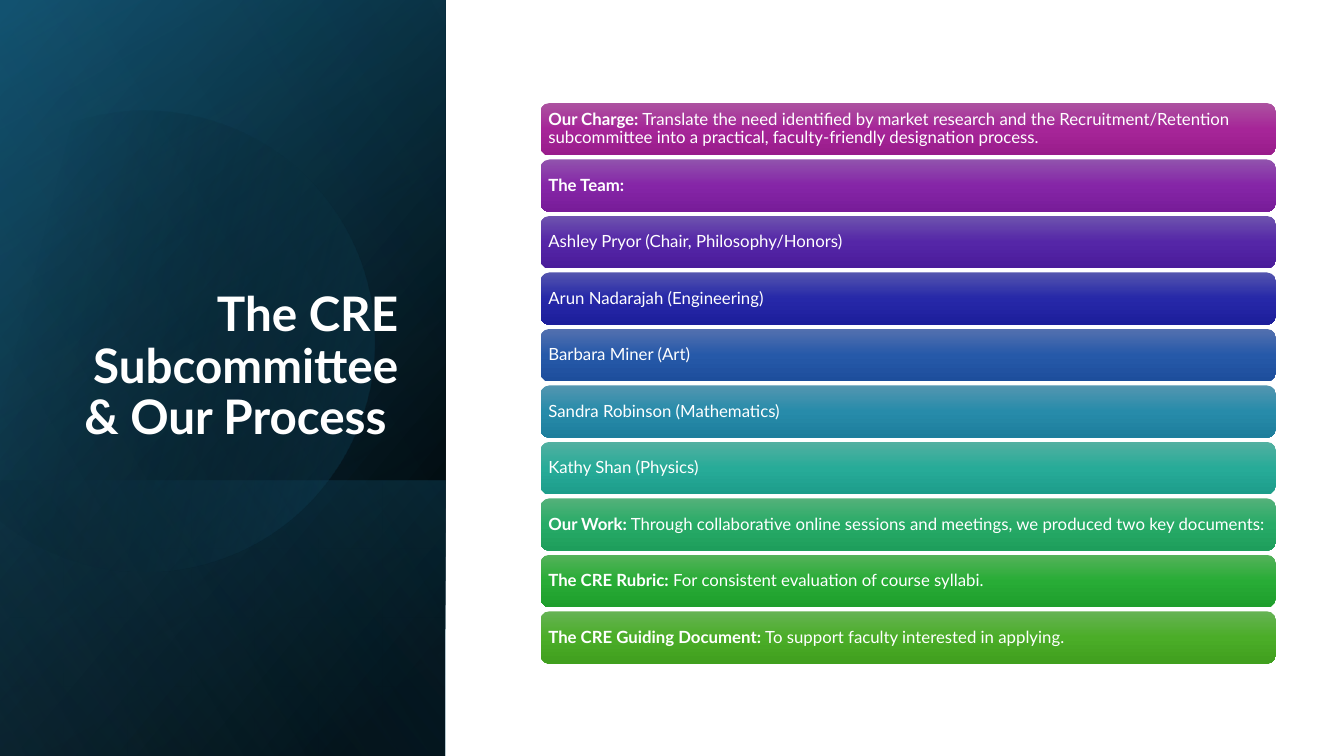
"""Build the slide on the CRE subcommittee: a title panel beside ten coloured bars."""
from dataclasses import dataclass
from itertools import pairwise
from math import cos, radians, sin, tan

from lxml.etree import SubElement
from pptx import Presentation
from pptx.dml.color import RGBColor
from pptx.enum.shapes import MSO_SHAPE as Geom
from pptx.enum.text import MSO_ANCHOR as Anchor, PP_ALIGN as Align
from pptx.oxml.ns import qn
from pptx.shapes.autoshape import Shape
from pptx.slide import Slide
from pptx.text.text import TextFrame
from pptx.util import Emu, Inches, Pt

SLIDE_W, SLIDE_H = Inches(13.3333), Inches(7.5)
FONT = "Lato"
WHITE = RGBColor(0xFF, 0xFF, 0xFF)
BLACK = RGBColor(0x00, 0x00, 0x00)
NAVY = RGBColor(0x10, 0x48, 0x62)
TEAL = RGBColor(0x15, 0x60, 0x82)
SKY = RGBColor(0x46, 0xB1, 0xE1)


@dataclass(frozen=True)
class Box:
    left: float
    top: float
    width: float
    height: float

    def emu(self) -> tuple[Emu, Emu, Emu, Emu]:
        return across(self.left), down(self.top), across(self.width), down(self.height)

    def lowered(self, percent: float) -> "Box":
        return Box(self.left, self.top + percent, self.width, self.height)


@dataclass(frozen=True)
class Stop:
    position: int
    color: RGBColor
    alpha: int = 100


@dataclass(frozen=True)
class Gradient:
    angle: int
    stops: tuple[Stop, ...]


@dataclass(frozen=True)
class Panel:
    box: Box
    gradient: Gradient


@dataclass(frozen=True)
class Bar:
    heading: str
    body: str
    top: RGBColor
    middle: RGBColor
    bottom: RGBColor


SIDE = Box(0, 0, 33.15, 100)
SIDE_FOOT = Box(0, 63.53, 33.15, 36.47)
TITLE = Box(4.78, 24.6, 25.58, 34.93)
FIRST_BAR = Box(40.23, 13.63, 54.68, 6.93)
FIRST_LABEL = Box(40.43, 13.97, 54.3, 6.27)
BAR_PITCH = 7.47

BACK_PANELS = (
    Panel(SIDE, Gradient(50, (Stop(8, BLACK), Stop(100, NAVY)))),
    Panel(SIDE, Gradient(30, (Stop(0, BLACK, 0), Stop(99, TEAL, 46)))),
    Panel(SIDE_FOOT, Gradient(130, (Stop(2, TEAL, 29), Stop(100, BLACK, 30)))),
)
FRONT_PANEL = Panel(SIDE, Gradient(120, (Stop(0, BLACK, 0), Stop(99, SKY, 11))))
DISC_GRADIENT = Gradient(30, (Stop(29, BLACK, 0), Stop(100, TEAL, 43)))
DISC_ANGLES = (-117.9, -90, 0, 90, 150.1)

BARS = (
    Bar("Our Charge:", " Translate the need identified by market research and the "
        "Recruitment/Retention subcommittee into a practical, faculty-friendly designation process.",
        RGBColor(0xAC, 0x53, 0xA0), RGBColor(0xA6, 0x25, 0x98), RGBColor(0x99, 0x1C, 0x8B)),
    Bar("The Team:", "",
        RGBColor(0x91, 0x53, 0xAD), RGBColor(0x85, 0x25, 0xA7), RGBColor(0x78, 0x1C, 0x99)),
    Bar("", "Ashley Pryor (Chair, Philosophy/Honors)",
        RGBColor(0x6D, 0x53, 0xAE), RGBColor(0x55, 0x26, 0xA7), RGBColor(0x4A, 0x1C, 0x9A)),
    Bar("", "Arun Nadarajah (Engineering)",
        RGBColor(0x53, 0x54, 0xAE), RGBColor(0x26, 0x28, 0xA8), RGBColor(0x1D, 0x1E, 0x9B)),
    Bar("", "Barbara Miner (Art)",
        RGBColor(0x53, 0x70, 0xAF), RGBColor(0x26, 0x59, 0xA9), RGBColor(0x1D, 0x4E, 0x9C)),
    Bar("", "Sandra Robinson (Mathematics)",
        RGBColor(0x53, 0x96, 0xB0), RGBColor(0x27, 0x8B, 0xAA), RGBColor(0x1D, 0x7E, 0x9C)),
    Bar("", "Kathy Shan (Physics)",
        RGBColor(0x53, 0xB0, 0xA1), RGBColor(0x27, 0xAB, 0x98), RGBColor(0x1D, 0x9D, 0x8B)),
    Bar("Our Work:", " Through collaborative online sessions and meetings, "
        "we produced two key documents:",
        RGBColor(0x54, 0xB1, 0x7A), RGBColor(0x27, 0xAB, 0x67), RGBColor(0x1E, 0x9E, 0x5C)),
    Bar("The CRE Rubric:", " For consistent evaluation of course syllabi.",
        RGBColor(0x54, 0xB2, 0x5A), RGBColor(0x28, 0xAC, 0x36), RGBColor(0x1E, 0x9E, 0x2C)),
    Bar("The CRE Guiding Document:", " To support faculty interested in applying.",
        RGBColor(0x66, 0xB3, 0x54), RGBColor(0x4B, 0xAD, 0x28), RGBColor(0x40, 0x9F, 0x1E)),
)


def across(percent: float) -> Emu:
    return Emu(round(SLIDE_W * percent / 100))


def down(percent: float) -> Emu:
    return Emu(round(SLIDE_H * percent / 100))


def paint(sp: Shape, gradient: Gradient) -> None:
    sp.shadow.inherit = False
    sp.line.fill.background()
    sp.fill.gradient()
    fill = sp.element.spPr.find(qn("a:gradFill"))
    fill.find(qn("a:lin")).set("ang", str(gradient.angle * 60000))
    stops = fill.find(qn("a:gsLst"))
    for old in list(stops):
        stops.remove(old)
    for stop in gradient.stops:
        gs = SubElement(stops, qn("a:gs"), pos=str(stop.position * 1000))
        color = SubElement(gs, qn("a:srgbClr"), val=str(stop.color))
        if stop.alpha < 100:
            SubElement(color, qn("a:alpha"), val=str(stop.alpha * 1000))


def add_panel(s: Slide, panel: Panel) -> None:
    left, top, width, height = panel.box.emu()
    shift = (width - height) // 2
    sp = s.shapes.add_shape(Geom.RECTANGLE, left + shift, top - shift, height, width)
    sp.rotation = 90
    sp.element.spPr.find(qn("a:xfrm")).set("flipH", "1")
    paint(sp, panel.gradient)


def add_disc(s: Slide) -> None:
    center_x, center_y, radius = across(10.69), down(44.53), down(30.47)

    def on_disc(angle: float, pull: float = 0) -> tuple[int, int]:
        c, d = cos(radians(angle)), sin(radians(angle))
        return round(center_x + radius * (c - pull * d)), round(center_y + radius * (d + pull * c))

    anchors = [on_disc(angle) for angle in DISC_ANGLES]
    builder = s.shapes.build_freeform(*anchors[0])
    builder.add_line_segments(anchors[1:], close=True)
    sp = builder.convert_to_shape()
    lines = list(sp.element.spPr.iter(qn("a:lnTo")))
    for line, (start, end) in zip(lines, pairwise(DISC_ANGLES)):
        pull = 4 / 3 * tan(radians(end - start) / 4)
        line.tag = qn("a:cubicBezTo")
        for i, (x, y) in enumerate((on_disc(start, pull), on_disc(end, -pull))):
            pt = SubElement(line, qn("a:pt"), x=str(x - sp.left), y=str(y - sp.top))
            line.insert(i, pt)
    sp.rotation = 343.9
    paint(sp, DISC_GRADIENT)


def style_text(tf: TextFrame, size: float, align: Align, anchor: Anchor) -> None:
    tf.word_wrap = True
    tf.vertical_anchor = anchor
    p = tf.paragraphs[0]
    p.alignment = align
    p.line_spacing = 0.9
    for r in p.runs:
        r.font.name = FONT
        r.font.size = Pt(size)
        r.font.color.rgb = WHITE


def add_title(s: Slide) -> None:
    tf = s.shapes.add_textbox(*TITLE.emu()).text_frame
    tf.text = "The CRE Subcommittee & Our Process "
    style_text(tf, 34, Align.RIGHT, Anchor.BOTTOM)
    tf.paragraphs[0].runs[0].font.bold = True


def add_bar(s: Slide, row: int, bar: Bar) -> None:
    drop = row * BAR_PITCH
    sp = s.shapes.add_shape(Geom.ROUNDED_RECTANGLE, *FIRST_BAR.lowered(drop).emu())
    paint(sp, Gradient(90, (Stop(0, bar.top), Stop(50, bar.middle), Stop(100, bar.bottom))))
    tf = s.shapes.add_textbox(*FIRST_LABEL.lowered(drop).emu()).text_frame
    tf.margin_left = tf.margin_right = tf.margin_top = tf.margin_bottom = Inches(0.05)
    for text, bold in ((bar.heading, True), (bar.body, False)):
        if text:
            r = tf.paragraphs[0].add_run()
            r.text = text
            r.font.bold = bold
    style_text(tf, 12, Align.LEFT, Anchor.MIDDLE)


def main() -> None:
    prs = Presentation()
    prs.slide_width, prs.slide_height = SLIDE_W, SLIDE_H
    s = prs.slides.add_slide(prs.slide_layouts[6])
    for panel in BACK_PANELS:
        add_panel(s, panel)
    add_disc(s)
    add_panel(s, FRONT_PANEL)
    add_title(s)
    for row, bar in enumerate(BARS):
        add_bar(s, row, bar)
    prs.save("out.pptx")


if __name__ == "__main__":
    main()
